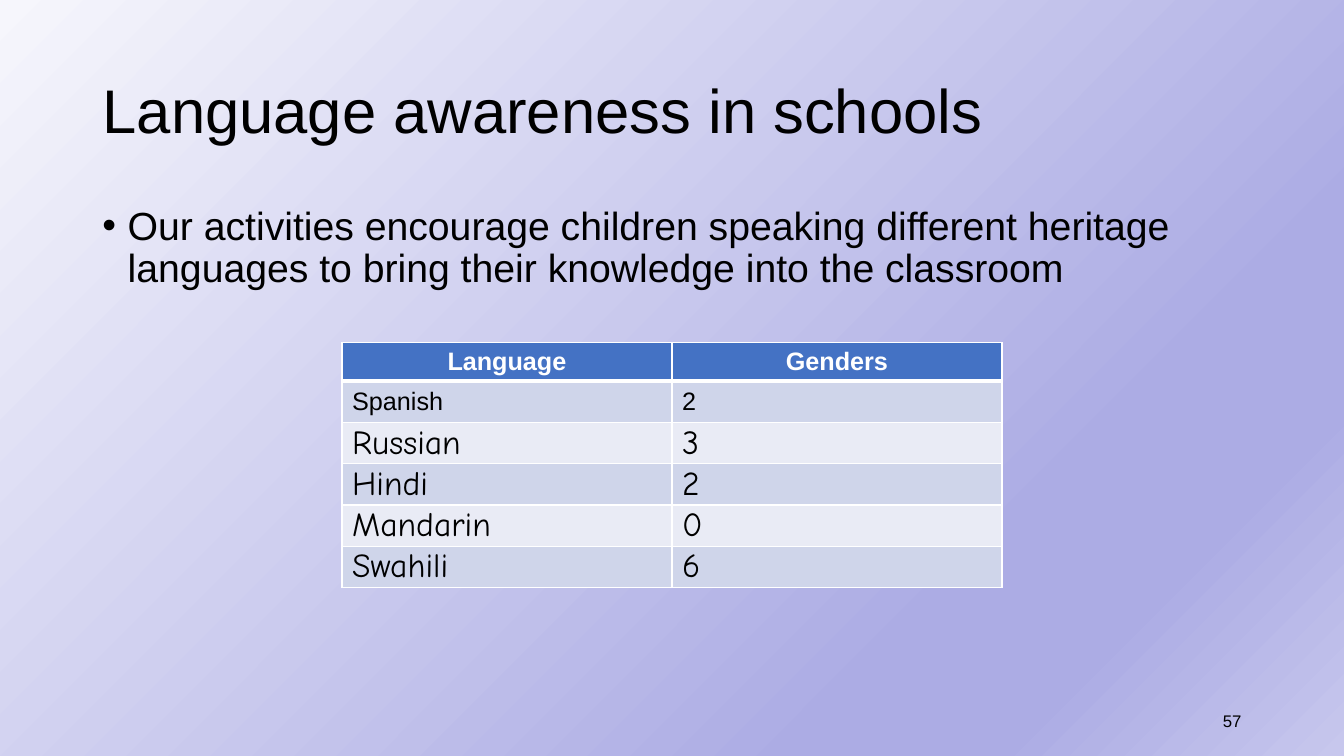
from lxml import etree
from pptx import Presentation
from pptx.dml.color import RGBColor
from pptx.enum.text import MSO_ANCHOR, MSO_AUTO_SIZE, PP_ALIGN
from pptx.oxml.ns import qn
from pptx.util import Cm, Pt

LEFT, CENTER, RIGHT = PP_ALIGN.LEFT, PP_ALIGN.CENTER, PP_ALIGN.RIGHT
TOP, MIDDLE = MSO_ANCHOR.TOP, MSO_ANCHOR.MIDDLE
NO_FIT = MSO_AUTO_SIZE.NONE

BLACK = RGBColor(0x00, 0x00, 0x00)
WHITE = RGBColor(0xFF, 0xFF, 0xFF)
HEADER = RGBColor(0x44, 0x72, 0xC4)
BANDS = RGBColor(0xCF, 0xD5, 0xEA), RGBColor(0xE9, 0xEB, 0xF5)
LAVENDER = RGBColor(0xAC, 0xAC, 0xE4)
BACKDROP = [
    (0, RGBColor(0xF6, 0xF6, 0xFC)),
    (74, LAVENDER),
    (83, LAVENDER),
    (100, RGBColor(0xC7, 0xC7, 0xED)),
]
LANGUAGES = [
    ("Language", "Genders"),
    ("Spanish", "2"),
    ("Russian", "3"),
    ("Hindi", "2"),
    ("Mandarin", "0"),
    ("Swahili", "6"),
]


def apply(target, values):
    for name, value in values.items():
        setattr(target, name, value)


def add_color(parent, color):
    fill = etree.SubElement(parent, qn("a:solidFill"))
    etree.SubElement(fill, qn("a:srgbClr"), val=str(color))


class Deck:
    font, accent_font = "Arial", "Comic Neue"

    def __init__(self):
        self.prs = Presentation()
        self.prs.slide_width, self.prs.slide_height = Cm(33.87), Cm(19.05)
        self.s = self.prs.slides.add_slide(self.prs.slide_layouts[5])

    def background(self, stops, angle):
        fill = self.s.background.fill
        fill.gradient()
        fill.gradient_angle = angle
        gs_list = self.s.element.find(".//" + qn("a:gsLst"))
        for gs in list(gs_list):
            gs_list.remove(gs)
        for position, color in stops:
            gs = etree.SubElement(gs_list, qn("a:gs"), pos=str(position * 1000))
            etree.SubElement(gs, qn("a:srgbClr"), val=str(color))

    def paragraph(self, tf, text, size, align=LEFT, color=BLACK, bold=False,
                  font=None, spacing=1.0, bullet=False):
        p = tf.paragraphs[0]
        if bullet:
            p_pr = p._p.get_or_add_pPr()
            p_pr.set("marL", str(Cm(0.64)))
            p_pr.set("indent", str(-Cm(0.64)))
            etree.SubElement(p_pr, qn("a:buFont"), typeface="Arial")
            etree.SubElement(p_pr, qn("a:buChar"), char="•")
        apply(p, {"alignment": align, "line_spacing": spacing})
        r = p.add_run()
        r.text = text
        apply(r.font, {"name": font or self.font, "size": Pt(size), "bold": bold})
        r.font.color.rgb = color

    def place(self, sp, box, anchor, text, size, **style):
        apply(sp, dict(zip(("left", "top", "width", "height"), map(Cm, box))))
        tf = sp.text_frame
        apply(tf, {"word_wrap": True, "auto_size": NO_FIT, "vertical_anchor": anchor})
        self.paragraph(tf, text, size, **style)

    def title(self, text, box):
        self.place(self.s.shapes.title, box, MIDDLE, text, 44, spacing=0.9)

    def text(self, text, box, size, anchor=TOP, **style):
        sp = self.s.shapes.add_textbox(0, 0, 0, 0)
        self.place(sp, box, anchor, text, size, **style)

    def borders(self, cell, bottom):
        tc_pr = cell._tc.get_or_add_tcPr()
        for side, width in (("L", 1), ("R", 1), ("T", 1), ("B", bottom)):
            ln = etree.SubElement(tc_pr, qn("a:ln" + side), w=str(Pt(width)))
            add_color(ln, WHITE)

    def table(self, rows, box, header_height, row_height):
        frame = self.s.shapes.add_table(len(rows), len(rows[0]), *map(Cm, box))
        table = frame.table
        apply(table, {"first_row": False, "horz_banding": False})
        for i, values in enumerate(rows):
            table.rows[i].height = Cm(row_height if i else header_height)
            for j, value in enumerate(values):
                self.cell(table.cell(i, j), i, value)

    def cell(self, cell, row, value):
        self.borders(cell, 1 if row else 3)
        cell.fill.solid()
        if row == 0:
            cell.fill.fore_color.rgb = HEADER
            style = {"size": 18, "align": CENTER, "color": WHITE, "bold": True}
        else:
            cell.fill.fore_color.rgb = BANDS[(row - 1) % 2]
            apply(cell, {"vertical_anchor": MIDDLE, "margin_top": 0, "margin_bottom": 0})
            style = {"size": 18} if row == 1 else {"size": 24, "font": self.accent_font}
        self.paragraph(cell.text_frame, value, **style)


def main():
    deck = Deck()
    deck.background(BACKDROP, 315)
    deck.title("Language awareness in schools", (2.33, 1.01, 29.21, 3.68))
    deck.text("Our activities encourage children speaking different heritage "
              "languages to bring their knowledge into the classroom",
              (2.33, 5.07, 29.21, 2.85), 28, spacing=0.9, bullet=True)
    deck.table(LANGUAGES, (8.62, 8.64, 16.63, 6.17), 0.96, 1.04)
    deck.text("57", (23.92, 17.66, 7.62, 1.01), 12, anchor=MIDDLE, align=RIGHT)
    deck.prs.save("out.pptx")


if __name__ == "__main__":
    main()
